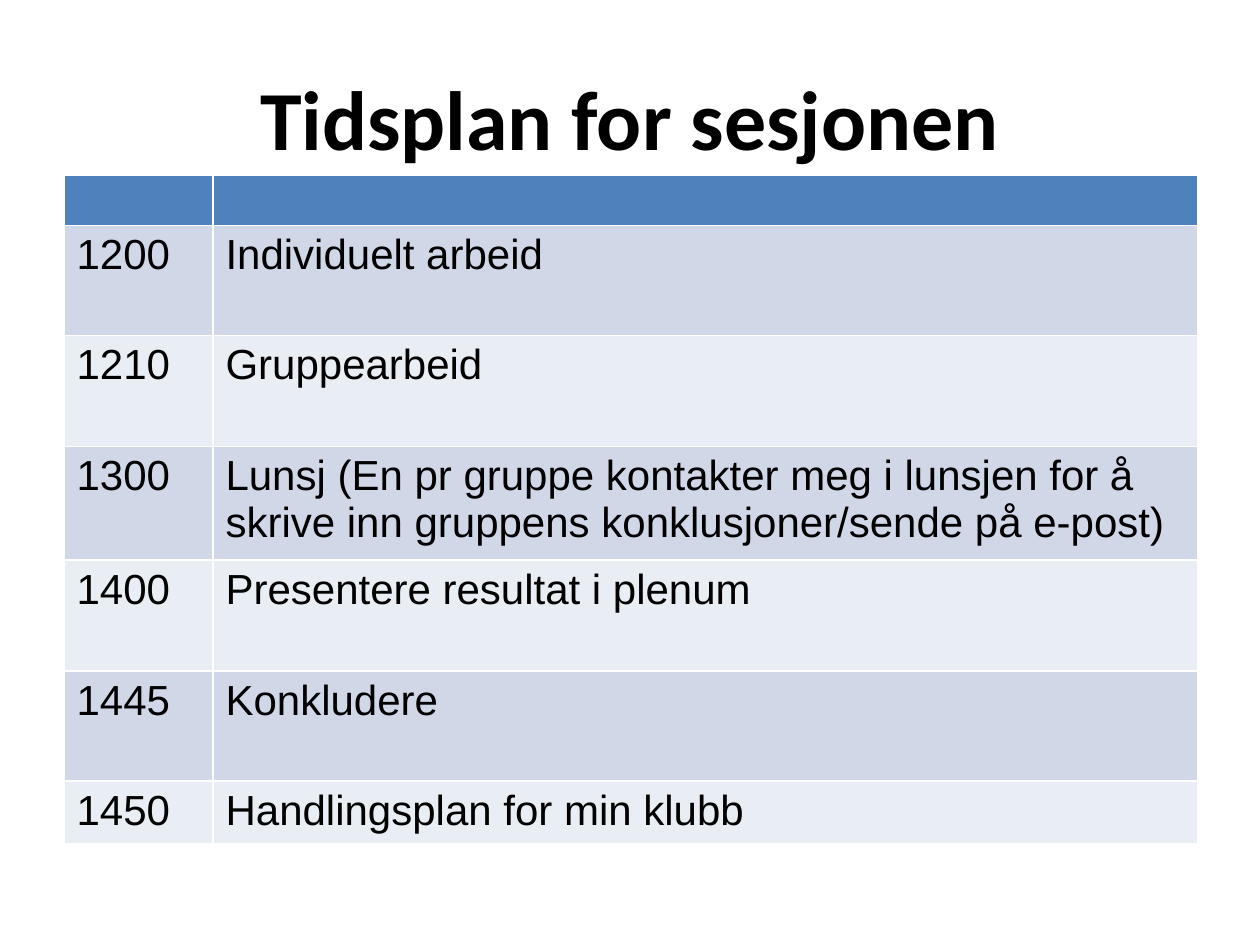
from dataclasses import dataclass

from pptx import Presentation
from pptx.dml.color import RGBColor
from pptx.enum.text import MSO_ANCHOR, PP_ALIGN
from pptx.util import Pt

TITLE = "Tidsplan for sesjonen"
SCHEDULE = [
    ("", ""),
    ("1200", "Individuelt arbeid"),
    ("1210", "Gruppearbeid"),
    ("1300", "Lunsj (En pr gruppe kontakter meg i lunsjen for å skrive inn "
             "gruppens konklusjoner/sende på e-post)"),
    ("1400", "Presentere resultat i plenum"),
    ("1445", "Konkludere"),
    ("1450", "Handlingsplan for min klubb"),
]
COLUMN_WIDTHS = (149, 985)
ROW_HEIGHTS = (50, 110, 111, 106, 111, 110, 60)


@dataclass(frozen=True)
class Theme:
    title_font: str = "Calibri"
    body_font: str = "Arial"
    title_size: int = 48
    body_size: int = 24
    header_size: int = 18
    ink: str = "000000"
    header: str = "4F81BD"
    bands: tuple = ("E9EDF4", "D0D8E8")


THEME = Theme()


def px(length):
    return round(length * 914400 / 126)


def style_font(font, name, size, bold=False):
    font.name = name
    font.size = Pt(size)
    font.bold = bold
    font.color.rgb = RGBColor.from_string(THEME.ink)


def add_title(page):
    box = page.shapes.add_textbox(px(63), px(38), px(1134), px(158))
    frame = box.text_frame
    frame.word_wrap = True
    frame.vertical_anchor = MSO_ANCHOR.MIDDLE
    para = frame.paragraphs[0]
    para.text = TITLE
    para.alignment = PP_ALIGN.CENTER
    style_font(para.font, THEME.title_font, THEME.title_size, bold=True)


def add_schedule(page):
    table = page.shapes.add_table(
        len(SCHEDULE), len(COLUMN_WIDTHS), px(64), px(175),
        px(sum(COLUMN_WIDTHS)), px(sum(ROW_HEIGHTS))).table
    for column, width in zip(table.columns, COLUMN_WIDTHS):
        column.width = px(width)
    for index, (row, height, texts) in enumerate(
            zip(table.rows, ROW_HEIGHTS, SCHEDULE)):
        row.height = px(height)
        fill = THEME.bands[index % 2] if index else THEME.header
        size = THEME.body_size if index else THEME.header_size
        for cell, text in zip(row.cells, texts):
            cell.fill.solid()
            cell.fill.fore_color.rgb = RGBColor.from_string(fill)
            para = cell.text_frame.paragraphs[0]
            para.text = text
            style_font(para.font, THEME.body_font, size)


def main():
    deck = Presentation()
    deck.slide_width, deck.slide_height = px(1260), px(945)
    page = deck.slides.add_slide(deck.slide_layouts[6])
    add_title(page)
    add_schedule(page)
    deck.save("out.pptx")


if __name__ == "__main__":
    main()
